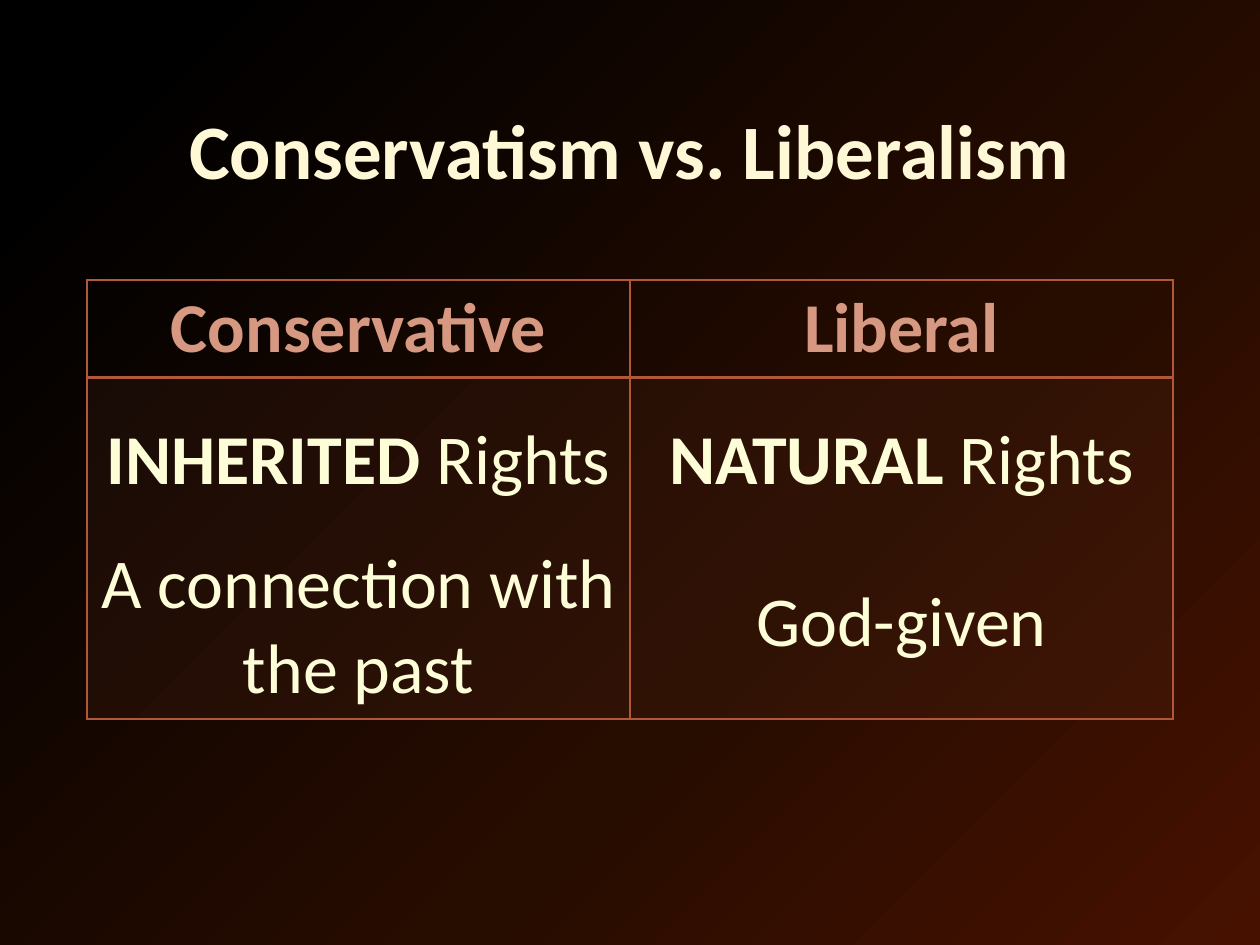
from copy import deepcopy
from dataclasses import dataclass

from lxml.etree import SubElement
from pptx import Presentation
from pptx.dml.color import RGBColor
from pptx.enum.text import MSO_ANCHOR, PP_ALIGN
from pptx.oxml import parse_xml
from pptx.oxml.ns import nsdecls, qn
from pptx.util import Emu, Pt

EMU_PER_PX = 914400 // 126
FONT = "Calibri"

CREAM = RGBColor(0xFF, 0xF8, 0xD7)
PALE_YELLOW = RGBColor(0xFD, 0xFD, 0xD8)
SALMON = RGBColor(0xD7, 0x98, 0x81)
RUST = RGBColor(0xB1, 0x58, 0x38)
BROWN = RGBColor(0x58, 0x2C, 0x1C)
BACKDROP = (
    (0.09, RGBColor(0x00, 0x00, 0x00)),
    (0.63, RGBColor(0x27, 0x0C, 0x00)),
    (1.00, RGBColor(0x47, 0x11, 0x00)),
)

TABLE_LEFT, TABLE_TOP = 87, 280
COLUMN_WIDTH = 543
HEADER_HEIGHT, BODY_HEIGHT = 98, 341
BODY_TOP_MARGIN = 40
BODY_OPACITY = 20


@dataclass(frozen=True)
class Viewpoint:
    name: str
    rights_kind: str
    origin: str
    origin_gap_pt: int


VIEWPOINTS = (
    Viewpoint("Conservative", "INHERITED", "A connection with the past", 22),
    Viewpoint("Liberal", "NATURAL", "God-given", 44),
)


def px(length: int) -> Emu:
    return Emu(length * EMU_PER_PX)


def style_run(run, size: int, color: RGBColor, bold: bool) -> None:
    run.font.name = FONT
    run.font.size = Pt(size)
    run.font.bold = bold
    run.font.color.rgb = color


def write_centered(paragraph, text: str, size: int, color: RGBColor, bold: bool) -> None:
    paragraph.text = text
    paragraph.alignment = PP_ALIGN.CENTER
    style_run(paragraph.runs[0], size, color, bold)


def paint_backdrop(slide) -> None:
    fill = slide.background.fill
    fill.gradient()
    fill.gradient_angle = 315
    stop_list = slide.element.xpath(".//a:gsLst")[0]
    stop_list.append(deepcopy(stop_list[-1]))
    for stop, (position, color) in zip(fill.gradient_stops, BACKDROP):
        stop.position = position
        stop.color.rgb = color


def set_borders(cell, bottom_pt: int = 1) -> None:
    """Outline a cell; the border elements must precede its fill."""
    properties = cell._tc.get_or_add_tcPr()
    for index, (side, width) in enumerate(
        (("L", 1), ("R", 1), ("T", 1), ("B", bottom_pt))
    ):
        properties.insert(index, parse_xml(
            f'<a:ln{side} {nsdecls("a")} w="{Pt(width)}"><a:solidFill>'
            f'<a:srgbClr val="{RUST}"/></a:solidFill></a:ln{side}>'
        ))


def fill_header(cell, view: Viewpoint) -> None:
    write_centered(cell.text_frame.paragraphs[0], view.name, 40, SALMON, True)
    cell.fill.background()
    set_borders(cell, bottom_pt=2)


def fill_body(cell, view: Viewpoint) -> None:
    cell.margin_top = px(BODY_TOP_MARGIN)
    rights = cell.text_frame.paragraphs[0]
    write_centered(rights, f"{view.rights_kind} ", 40, PALE_YELLOW, True)
    rights_word = rights.add_run()
    rights_word.text = "Rights"
    style_run(rights_word, 40, PALE_YELLOW, False)

    origin = cell.text_frame.add_paragraph()
    write_centered(origin, view.origin, 40, PALE_YELLOW, False)
    origin.space_before = Pt(view.origin_gap_pt)

    cell.fill.solid()
    cell.fill.fore_color.rgb = BROWN
    tint = cell._tc.tcPr.find(qn("a:solidFill"))[0]
    SubElement(tint, qn("a:alpha"), val=str(BODY_OPACITY * 1000))
    set_borders(cell)


def add_title(slide) -> None:
    title = slide.shapes.title
    title.left, title.top, title.width, title.height = map(px, (0, 63, 1260, 183))
    title.text_frame.vertical_anchor = MSO_ANCHOR.MIDDLE
    heading = title.text_frame.paragraphs[0]
    write_centered(heading, "Conservatism vs. Liberalism", 44, CREAM, True)
    heading.line_spacing = 0.9


def add_comparison(slide) -> None:
    table = slide.shapes.add_table(
        2, len(VIEWPOINTS), px(TABLE_LEFT), px(TABLE_TOP),
        px(COLUMN_WIDTH * len(VIEWPOINTS)), px(HEADER_HEIGHT + BODY_HEIGHT),
    ).table
    table.first_row = table.horz_banding = False
    for row, height in zip(table.rows, (HEADER_HEIGHT, BODY_HEIGHT)):
        row.height = px(height)
    for column, view in enumerate(VIEWPOINTS):
        fill_header(table.cell(0, column), view)
        fill_body(table.cell(1, column), view)


def main() -> None:
    deck = Presentation()
    deck.slide_width, deck.slide_height = px(1260), px(945)
    slide = deck.slides.add_slide(deck.slide_layouts[5])
    paint_backdrop(slide)
    add_title(slide)
    add_comparison(slide)
    deck.save("out.pptx")


if __name__ == "__main__":
    main()
